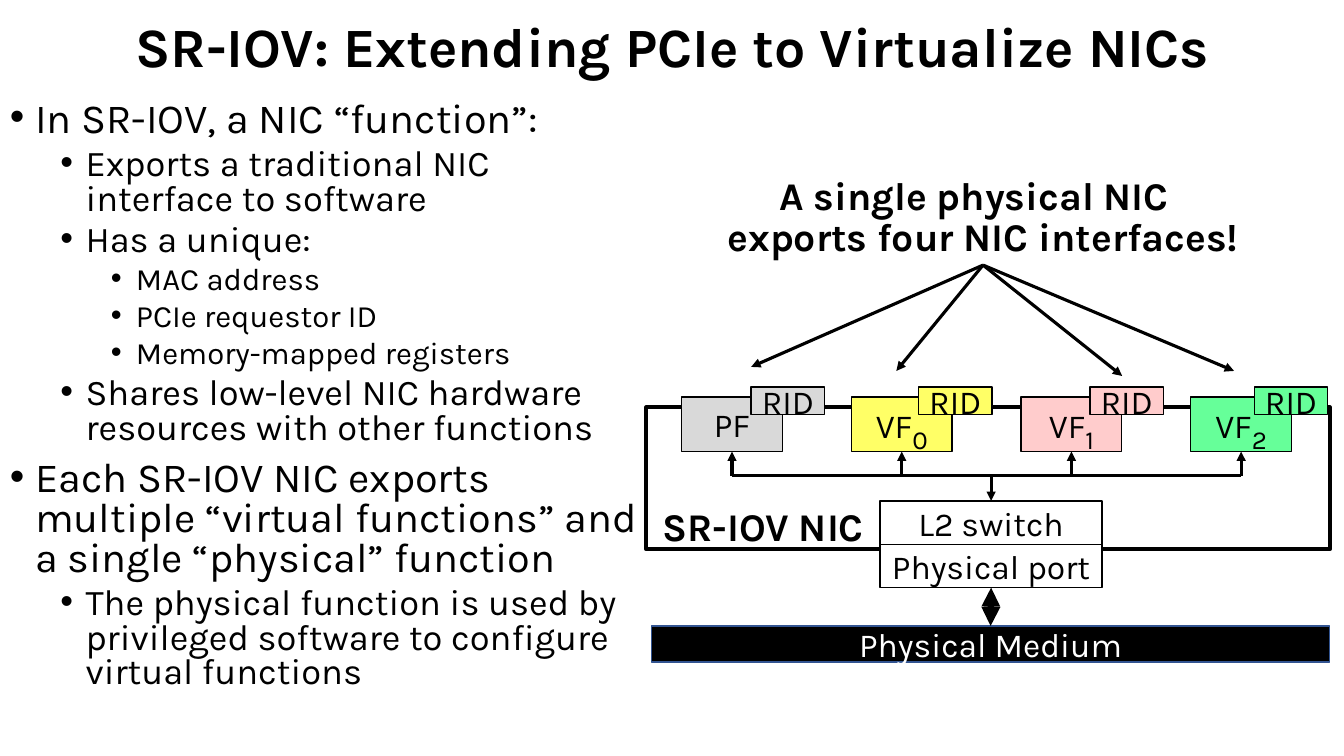
from dataclasses import dataclass

from lxml import etree
from pptx import Presentation
from pptx.dml.color import RGBColor
from pptx.enum.shapes import MSO_CONNECTOR as CONN, MSO_SHAPE as SHAPE
from pptx.enum.text import MSO_ANCHOR as ANCHOR, PP_ALIGN as ALIGN
from pptx.oxml.ns import qn
from pptx.util import Inches, Pt

TOP, BOTTOM = 0, 2


@dataclass(frozen=True)
class Theme:
    font: str = "Karla"
    black: str = "000000"
    white: str = "FFFFFF"
    medium_edge: str = "325491"
    pf: str = "D9D9D9"
    vfs: tuple = ("FFFF66", "FFCCCC", "66FF99")
    title: float = 39.6
    bullets: tuple = (29.6, 25.9, 22.2)
    caption: float = 28
    label: float = 24
    subscript: float = 32


class SlideBuilder:
    def __init__(self, slide, theme):
        self.s = slide
        self.t = theme

    def style(self, font, size, color, bold=False):
        font.name, font.size, font.bold = self.t.font, Pt(size), bold
        font.color.rgb = RGBColor.from_string(color)

    def text_box(self, box, anchor=ANCHOR.TOP):
        tf = self.s.shapes.add_textbox(*map(Inches, box)).text_frame
        tf.word_wrap = True
        tf.vertical_anchor = anchor
        return tf

    def heading(self, text, box, size, anchor=ANCHOR.TOP, spacing=None):
        p = self.text_box(box, anchor).paragraphs[0]
        p.text, p.alignment, p.line_spacing = text, ALIGN.CENTER, spacing
        self.style(p.font, size, self.t.black, bold=True)

    def bullets(self, items, box):
        """Write (level, text) pairs as a bulleted outline."""
        tf = self.text_box(box)
        for i, (level, text) in enumerate(items):
            p = tf.add_paragraph() if i else tf.paragraphs[0]
            p.text, p.level, p.line_spacing = text, level, 0.8
            p.space_before = Pt(5 if level else 10)
            self.style(p.font, self.t.bullets[level], self.t.black)
            pPr = p._p.get_or_add_pPr()
            pPr.set("marL", str(Inches(0.25 + 0.5 * level)))
            pPr.set("indent", str(Inches(-0.25)))
            bullet_font = etree.Element(qn("a:buFont"), typeface="Arial")
            bullet = etree.Element(qn("a:buChar"), char="•")
            pPr.find(qn("a:defRPr")).addprevious(bullet_font)
            bullet_font.addnext(bullet)

    def rect(self, box, fill=None, text="", sub="", color=None, edge=None, width=1):
        """Draw a labelled rectangle; sub is a subscript after the label."""
        sp = self.s.shapes.add_shape(SHAPE.RECTANGLE, *map(Inches, box))
        sp.shadow.inherit = False
        if fill:
            sp.fill.solid()
            sp.fill.fore_color.rgb = RGBColor.from_string(fill)
        else:
            sp.fill.background()
        sp.line.color.rgb = RGBColor.from_string(edge or self.t.black)
        sp.line.width = Pt(width)
        tf = sp.text_frame
        tf.word_wrap, tf.vertical_anchor = True, ANCHOR.MIDDLE
        p = tf.paragraphs[0]
        p.alignment = ALIGN.CENTER
        for part, size in ((text, self.t.label), (sub, self.t.subscript)):
            if part:
                r = p.add_run()
                r.text = part
                self.style(r.font, size, color or self.t.black)
        if sub:
            r._r.get_or_add_rPr().set("baseline", "-25000")
        return sp

    def line(self, start, end, width=2.25, heads=("tailEnd",), begin=None, finish=None):
        """Draw a line; begin and finish are (shape, side) pairs to join."""
        c = self.s.shapes.add_connector(CONN.STRAIGHT, *map(Inches, (*start, *end)))
        if begin:
            c.begin_connect(*begin)
        if finish:
            c.end_connect(*finish)
        c.line.color.rgb = RGBColor.from_string(self.t.black)
        c.line.width = Pt(width)
        ln = c.line._get_or_add_ln()
        for head in heads:
            etree.SubElement(ln, qn(f"a:{head}"), type="triangle")
        etree.SubElement(c._element.spPr, qn("a:effectLst"))


OUTLINE = [
    (0, "In SR-IOV, a NIC “function”:"),
    (1, "Exports a traditional NIC interface to software"),
    (1, "Has a unique:"),
    (2, "MAC address"),
    (2, "PCIe requestor ID"),
    (2, "Memory-mapped registers"),
    (1, "Shares low-level NIC hardware resources with other functions"),
    (0, "Each SR-IOV NIC exports multiple “virtual functions” and a single “physical” function"),
    (1, "The physical function is used by privileged software to configure virtual functions"),
]


def draw_nic(b):
    t = b.t
    medium = b.rect((6.46, 6.21, 6.73, 0.36), t.black, "Physical Medium",
                    color=t.white, edge=t.medium_edge)
    b.rect((6.41, 4.04, 6.78, 1.41), t.white, width=2.75)
    b.heading("SR-IOV NIC", (6.25, 4.93, 2.64, 0.57), t.caption)

    port_x, port_y, port_w, port_h = 8.73, 5.4, 2.2, 0.43
    mid = port_x + port_w / 2
    port = b.rect((port_x, port_y, port_w, port_h), t.white, "Physical port")
    switch = b.rect((port_x, port_y - port_h, port_w, port_h), text="L2 switch")
    b.line((mid, port_y + port_h), (mid, 6.21), width=4.5, heads=("headEnd", "tailEnd"),
           begin=(port, BOTTOM), finish=(medium, TOP))

    bus_y, first_x, last_x, fn_w = 4.72, 6.76, 11.81, 1
    step = (last_x - first_x) / 3
    apex = (9.75, 2.63)
    functions = [("PF", "", t.pf)] + [("VF", str(i), c) for i, c in enumerate(t.vfs)]
    rid_xs = (7.45, 9.11, 10.81, 12.44)
    tips = ((7.45, 3.64), (8.89, 3.68), (11.13, 3.73), (12.24, 3.68))
    for i, ((name, sub, fill), rid_x, tip) in enumerate(zip(functions, rid_xs, tips)):
        x = first_x + i * step
        fn = b.rect((x, 3.94, fn_w, 0.54), fill, name, sub)
        b.rect((rid_x, 3.84, 0.73, 0.27), fill, "RID")
        b.line(apex, tip)
        b.line((x + fn_w / 2, bus_y), (x + fn_w / 2, 4.48), finish=(fn, BOTTOM))
    b.line((first_x + fn_w / 2, bus_y), (last_x + fn_w / 2, bus_y), heads=())
    b.line((mid, bus_y), (mid, port_y - port_h), finish=(switch, TOP))

    b.heading("A single physical NIC", (6.62, 1.65, 6.08, 0.57), t.caption)
    b.heading("exports four NIC interfaces!", (6.85, 2.06, 5.8, 0.57), t.caption)


def main():
    prs = Presentation()
    prs.slide_width, prs.slide_height = Inches(13.33), Inches(7.5)
    b = SlideBuilder(prs.slides.add_slide(prs.slide_layouts[6]), Theme())
    b.heading("SR-IOV: Extending PCIe to Virtualize NICs", (0.92, 0.08, 11.5, 0.82),
              b.t.title, ANCHOR.MIDDLE, spacing=0.9)
    b.bullets(OUTLINE, (0, 0.96, 6.49, 6.6))
    draw_nic(b)
    prs.save("out.pptx")


if __name__ == "__main__":
    main()
